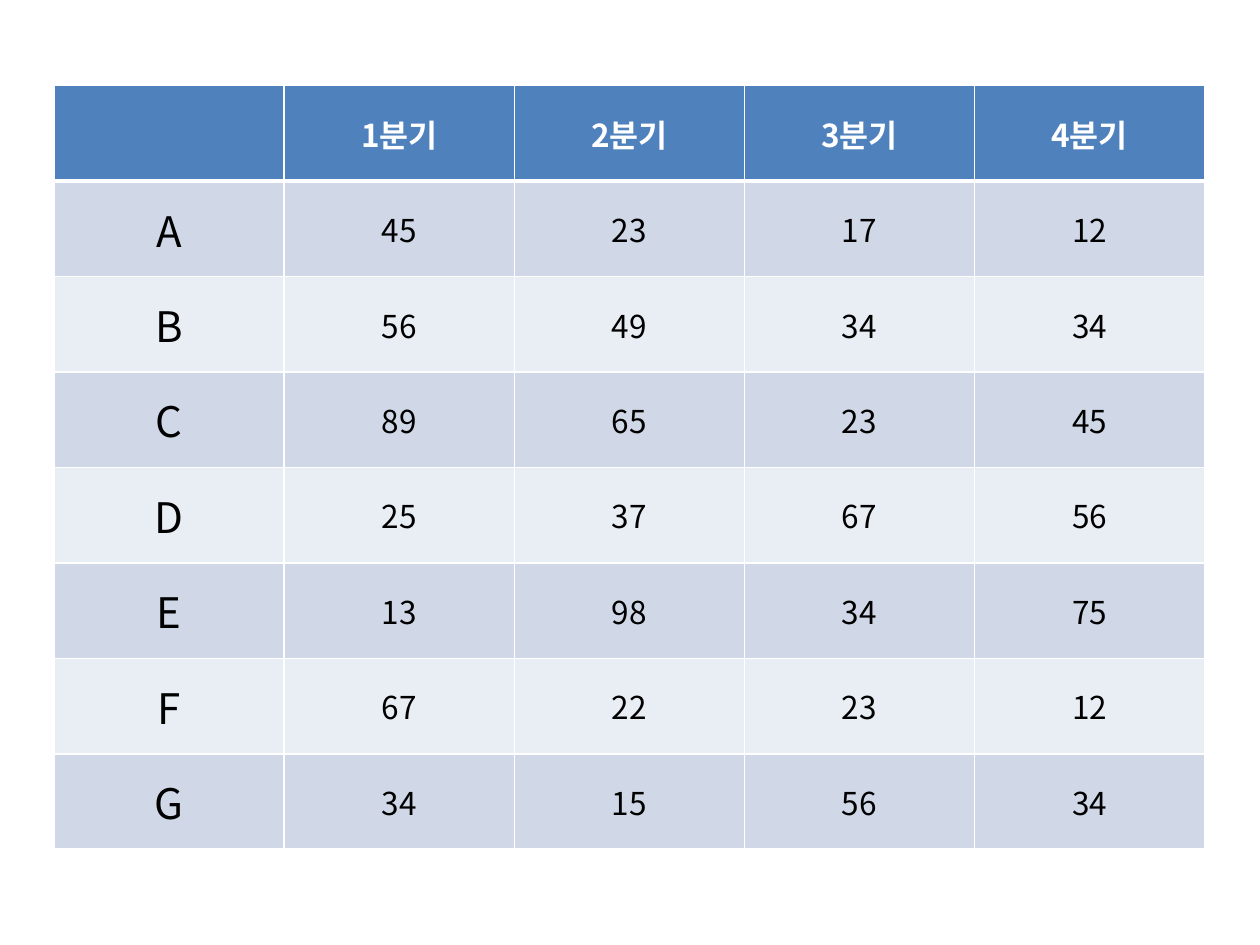
from lxml import etree
from pptx import Presentation
from pptx.dml.color import RGBColor
from pptx.enum import text
from pptx.oxml import ns
from pptx.util import Inches, Pt

FONT = "Noto Sans CJK KR"
QUARTERS = ["", "1분기", "2분기", "3분기", "4분기"]
RESULTS = [
    ("A", 45, 23, 17, 12),
    ("B", 56, 49, 34, 34),
    ("C", 89, 65, 23, 45),
    ("D", 25, 37, 67, 56),
    ("E", 13, 98, 34, 75),
    ("F", 67, 22, 23, 12),
    ("G", 34, 15, 56, 34),
]
HEADER_FILL, BAND_FILLS = "4F81BD", ("E9EDF4", "D0D8E8")
LEFT, TOP, WIDTH, HEIGHT = 0.43, 0.68, 9.13, 6.06


def color(value):
    return RGBColor.from_string(value)


def add_borders(cell, widths):
    """Draw white cell edges; widths maps L, R, T, B to points."""
    properties = cell._tc.get_or_add_tcPr()
    for side, width in widths.items():
        line = etree.SubElement(properties, ns.qn(f"a:ln{side}"), w=str(Pt(width)))
        fill = etree.SubElement(line, ns.qn("a:solidFill"))
        etree.SubElement(fill, ns.qn("a:srgbClr"), val="FFFFFF")


def write_text(cell, value, size, ink, bold):
    cell.vertical_anchor = text.MSO_ANCHOR.MIDDLE
    para = cell.text_frame.paragraphs[0]
    para.alignment = text.PP_ALIGN.CENTER
    span = para.add_run()
    span.text = value
    for name, setting in {"name": FONT, "size": Pt(size), "bold": bold}.items():
        setattr(span.font, name, setting)
    span.font.color.rgb = color(ink)
    etree.SubElement(span.font._element, ns.qn("a:ea"), typeface=FONT)


def main():
    deck = Presentation()
    deck.slide_width, deck.slide_height = Inches(10), Inches(7.5)
    page = deck.slides.add_slide(deck.slide_layouts[6])
    rows = [QUARTERS, *RESULTS]
    table = page.shapes.add_table(
        len(rows), len(QUARTERS), *map(Inches, (LEFT, TOP, WIDTH, HEIGHT))
    ).table

    for r, values in enumerate(rows):
        header = r == 0
        for c, value in enumerate(values):
            cell = table.cell(r, c)
            add_borders(cell, {"L": 1, "R": 1, "T": 3 if r == 1 else 1, "B": 3 if header else 1})
            cell.fill.solid()
            cell.fill.fore_color.rgb = color(HEADER_FILL if header else BAND_FILLS[r % 2])
            if value != "":
                size = 24 if c == 0 else 18
                write_text(cell, str(value), size, "FFFFFF" if header else "000000", header)

    deck.save("out.pptx")


if __name__ == "__main__":
    main()
